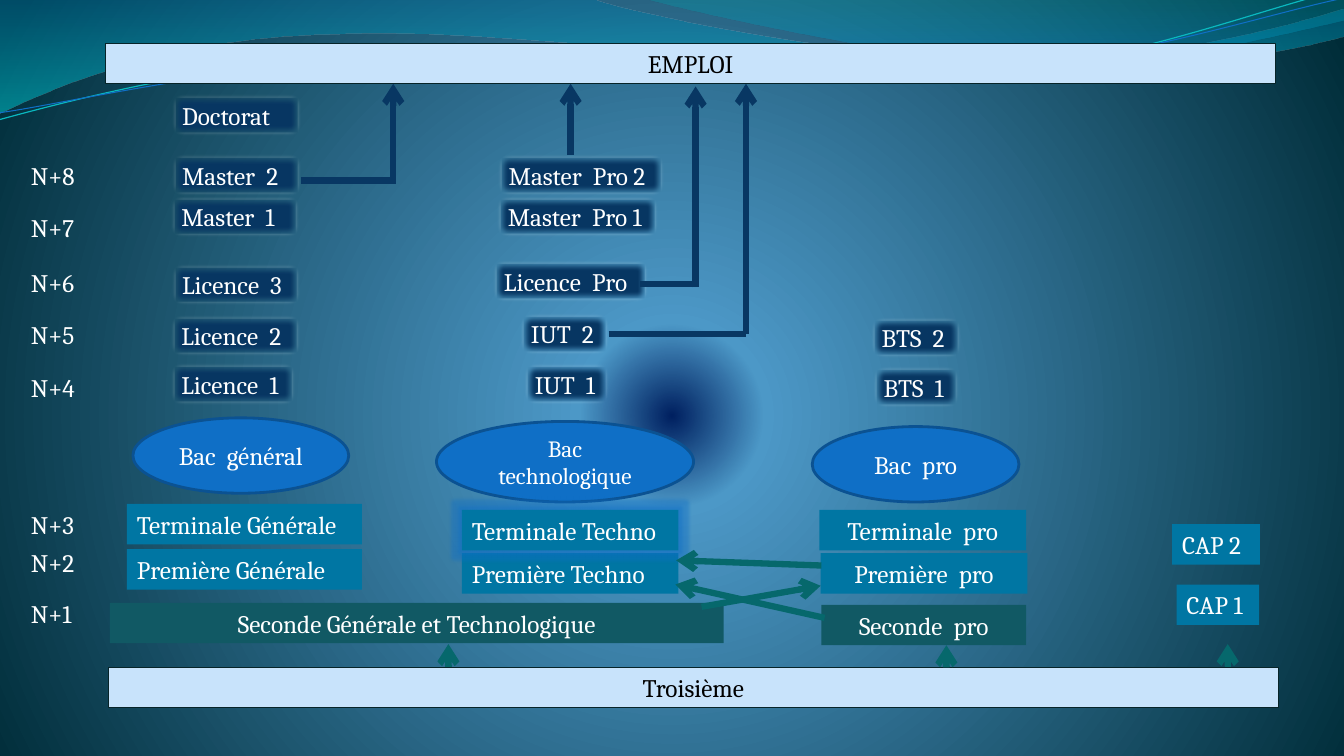
from lxml import etree
from pptx import Presentation
from pptx.dml.color import RGBColor
from pptx.enum.shapes import MSO_CONNECTOR, MSO_SHAPE
from pptx.enum.text import MSO_ANCHOR, PP_ALIGN
from pptx.oxml import parse_xml
from pptx.oxml.ns import nsdecls, qn
from pptx.util import Cm, Pt

RECT, OVAL = MSO_SHAPE.RECTANGLE, MSO_SHAPE.OVAL
LINE = MSO_CONNECTOR.STRAIGHT
LEFT, MID = PP_ALIGN.LEFT, PP_ALIGN.CENTER
CENTER = MSO_ANCHOR.MIDDLE
RIGHT_SIDE = 3
FONT = "Cambria"
ROW = 1.02
HEX = {
    "white": "FFFFFF", "black": "000000", "pale": "C8E3FB", "edge": "072428",
    "navy": "083763", "blue": "0F6FC6", "rim": "0B5292", "azure": "0076A3",
    "teal": "115964", "green": "06686C", "aqua": "0AB8BF",
}
SKY = [(0, "002060", 100), (12, "4C98C7", 100), (100, "002C38", 100)]
ROUND = ('<a:path path="circle"><a:fillToRect l="10000" t="110000" '
         'r="10000" b="100000"/></a:path>')
DOWN = '<a:lin ang="5400000" scaled="0"/>'
SOFT = f'<a:softEdge {nsdecls("a")} rad="63500"/>'
GLOW = (f'<a:glow {nsdecls("a")} rad="63500"><a:srgbClr val="{HEX["blue"]}">'
        '<a:alpha val="40000"/></a:srgbClr></a:glow>')

WAVES = [
    ([(0, 0), (14.91, -0.03), (16.1, 0.43, 22.48, 1.6, 25.68, 1.6),
      (28.91, 1.6, 32.46, 0.66, 33.86, 0.23), (33.91, 0.91),
      (33.3, 1.12, 29.46, 1.93, 25.25, 1.91), (21.06, 1.91, 12.93, 0.71, 8.71, 0.86),
      (4.37, 0.91, 1.55, 2.11, -0.03, 2.87)],
     [(0, "0074A1", 45), (100, "00C6CF", 55)]),
    ([(16.23, -0.03), (17.25, 0.28, 23.09, 1.57, 26.04, 1.65),
      (28.98, 1.75, 32.56, 0.81, 33.86, 0.53), (33.86, 0)],
     [(0, "00A1A9", 30), (80, "008BBF", 45)]),
]
THREADS = [
    ([(-0.03, 3.02), (1.63, 2.57, 5.36, 1.57, 9.37, 1.4),
      (13.39, 1.22, 20.07, 2.21, 24.13, 1.93), (28.19, 1.68, 31.8, 0.2, 33.81, -0.25)],
     "aqua", 0.85),
    ([(0, 2.84), (1.6, 2.62, 5.54, 1.68, 9.6, 1.5),
      (13.64, 1.35, 20.22, 2.08, 24.26, 1.83), (28.32, 1.57, 31.88, 0.36, 33.88, -0.05)],
     "blue", 0.75),
]
YEARS = [("N+8", 0), ("N+7", 1.31), ("N+6", 2.69), ("N+5", 4.01),
         ("N+4", 5.35), ("N+3", 8.79), ("N+2", 9.76), ("N+1", 11.04)]
TRACKS = [
    (3.2, [("Licence  1", 1.12, 6.78, 3.1), ("Licence  2", 1.12, 5.56, 3.23),
           ("Licence  3", 1.14, 4.27, 3.2), ("Master  1", 1.12, 2.56, 3.2),
           ("Master  2", 1.14, 1.52, 3.23), ("Doctorat", 1.14, 0, 3.23)],
     ("Bac  général", 0.15, 8.14, 5.44, 1.9, 18),
     [("Première Générale", 0, 11.45, 5.92, LEFT),
      ("Terminale Générale", 0, 10.31, 5.92, LEFT)]),
    (11, [("IUT  1", 2.23, 6.78, 2.11), ("IUT  2", 2.13, 5.51, 2.21),
          ("Licence  Pro", 1.45, 4.19, 3.86), ("Master  Pro 1", 1.55, 2.56, 4.01),
          ("Master  Pro 2", 1.57, 1.52, 4.14)],
     ("Bac technologique", 0, 8.23, 6.48, 2.03, 16.6),
     [("Première Techno", 0.64, 11.55, 5.46, LEFT),
      ("Terminale Techno", 0.64, 10.46, 5.46, LEFT)]),
    (20.47, [("BTS  1", 1.55, 6.86, 2.13), ("BTS  2", 1.5, 5.61, 2.24)],
     ("Bac  pro", 0, 8.36, 5.21, 1.9, 18),
     [("Première  pro", 0.21, 11.55, 5.21, MID),
      ("Terminale  pro", 0.18, 10.46, 5.21, MID)]),
    (29.54, [], None,
     [("CAP 2", 0, 10.82, 2.21, LEFT), ("CAP 1", 0.11, 12.34, 2.08, LEFT)]),
]
JOBS = [(2.32, 2.44, 2.32, 0, True), (6.79, 1.8, 6.79, 0, True),
        (11.21, 6.3, 11.21, 0, True), (8.54, 5.05, 9.89, 5.05, False),
        (9.94, 5.13, 9.94, 0.07, True), (0, 2.44, 2.39, 2.44, False)]
PATHS = [(6.38, 1.17, 9.38, 0.64, True), (9.48, 1.45, 5.72, 0.61, True),
         (9.4, 0.13, 5.74, 0, True), (0, 2.69, 0, 2.11, True),
         (12.55, 2.69, 12.55, 2.14, True), (19.64, 2.69, 19.64, 2.11, True)]


def tint(name):
    return RGBColor.from_string(HEX[name])


def blend(node, stops, shade):
    marks = "".join(
        f'<a:gs pos="{pos * 1000}"><a:srgbClr val="{code}">'
        f'<a:alpha val="{alpha * 1000}"/></a:srgbClr></a:gs>'
        for pos, code, alpha in stops)
    grad = parse_xml(f'<a:gradFill {nsdecls("a")} rotWithShape="1">'
                     f'<a:gsLst>{marks}</a:gsLst>{shade}</a:gradFill>')
    node.replace(node.find(qn("a:solidFill")), grad)


def write(shape, text, size=18, color="white", align=LEFT):
    frame = shape.text_frame
    frame.word_wrap = True
    frame.vertical_anchor = CENTER
    if align == LEFT:
        frame.margin_right = 0
    para = frame.paragraphs[0]
    para.alignment = align
    run = para.add_run()
    run.text = text
    run.font.name, run.font.size = FONT, Pt(size)
    run.font.color.rgb = tint(color)


def block(slide, kind, left, top, wide, high, fill, edge=None, width=0, glow=None):
    shape = slide.shapes.add_shape(kind, Cm(left), Cm(top), Cm(wide), Cm(high))
    shape.fill.solid()
    shape.fill.fore_color.rgb = tint(fill)
    if edge:
        shape.line.color.rgb = tint(edge)
        shape.line.width = Pt(width)
    else:
        shape.line.fill.background()
    shape.shadow.inherit = False
    if glow:
        shape.element.spPr.find(qn("a:effectLst")).append(parse_xml(glow))
    return shape


def ribbon(slide, left, top, parts, close):
    spots = [(Cm(left + part[i]), Cm(top + part[i + 1]))
             for part in parts for i in range(0, len(part), 2)]
    form = slide.shapes.build_freeform(*spots[0])
    form.add_line_segments(spots[1:], close=close)
    shape = form.convert_to_shape()
    shape.shadow.inherit = False
    steps = iter(shape.element.spPr.findall(".//" + qn("a:lnTo")))
    for part in parts[1:]:
        first = next(steps)
        if len(part) == 6:
            first.tag = qn("a:cubicBezTo")
            for step in (next(steps), next(steps)):
                first.append(step[0])
                step.getparent().remove(step)
    return shape


def backdrop(slide, left, top):
    slide.background.fill.solid()
    blend(slide.element.find(".//" + qn("p:bgPr")), SKY, ROUND)
    for parts, stops in WAVES:
        wave = ribbon(slide, left, top, parts, True)
        wave.fill.solid()
        blend(wave.element.spPr, stops, DOWN)
        wave.line.fill.background()
    for parts, color, width in THREADS:
        thread = ribbon(slide, left, top, parts, False)
        thread.fill.background()
        thread.line.color.rgb = tint(color)
        thread.line.width = Pt(width)


def bar(slide, left, top, wide, text):
    shape = block(slide, RECT, left, top, wide, ROW, "pale", "edge", 0.75)
    write(shape, text, color="black", align=MID)


def entry(slide, left, top, wide, text):
    write(block(slide, RECT, left, top, wide, ROW, "teal"), text, align=MID)


def scale(slide, left, top):
    for text, down in YEARS:
        label = slide.shapes.add_textbox(Cm(left), Cm(top + down), Cm(1.65), Cm(ROW))
        write(label, text)


def track(slide, left, top, grades, bac, forms):
    made = {}
    for text, x, y, wide in grades:
        made[text] = block(slide, RECT, left + x, top + y, wide, ROW,
                           "navy", "white", 4.5, SOFT)
        write(made[text], text)
    if bac:
        text, x, y, wide, high, size = bac
        oval = block(slide, OVAL, left + x, top + y, wide, high, "blue", "rim", 2)
        write(oval, text, size, align=MID)
    for text, x, y, wide, align in forms:
        glow = GLOW if text == "Terminale Techno" else None
        write(block(slide, RECT, left + x, top + y, wide, ROW, "azure", glow=glow),
              text, align=align)
    return made


def route(slide, left, top, leg, color):
    x, y, end_x, end_y, arrow = leg
    line = slide.shapes.add_connector(LINE, Cm(left + x), Cm(top + y),
                                      Cm(left + end_x), Cm(top + end_y))
    line.line.color.rgb = tint(color)
    line.line.width = Pt(4.5)
    props = line.element.spPr
    if arrow:
        etree.SubElement(props.find(qn("a:ln")), qn("a:tailEnd"), type="arrow")
    etree.SubElement(props, qn("a:effectLst"))
    return line


def main():
    deck = Presentation()
    deck.slide_width, deck.slide_height = Cm(33.87), Cm(19.05)
    slide = deck.slides.add_slide(deck.slide_layouts[6])
    backdrop(slide, 0, 0)
    bar(slide, 2.74, 16.81, 29.47, "Troisième")
    bar(slide, 2.67, 1.09, 29.47, "EMPLOI")
    entry(slide, 2.77, 15.19, 15.47, "Seconde Générale et Technologique")
    entry(slide, 20.7, 15.24, 5.16, "Seconde  pro")
    scale(slide, 0.53, 3.91)
    made = {}
    for left, grades, bac, forms in TRACKS:
        made.update(track(slide, left, 2.39, grades, bac, forms))
    for leg in JOBS:
        route(slide, 7.59, 2.11, leg, "navy")
    exit_leg = route(slide, 7.59, 2.11, (7.75, 6.3, 11.21, 6.3, False), "navy")
    exit_leg.begin_connect(made["IUT  2"], RIGHT_SIDE)
    for leg in PATHS:
        route(slide, 11.3, 14.12, leg, "green")
    deck.save("out.pptx")


if __name__ == "__main__":
    main()
